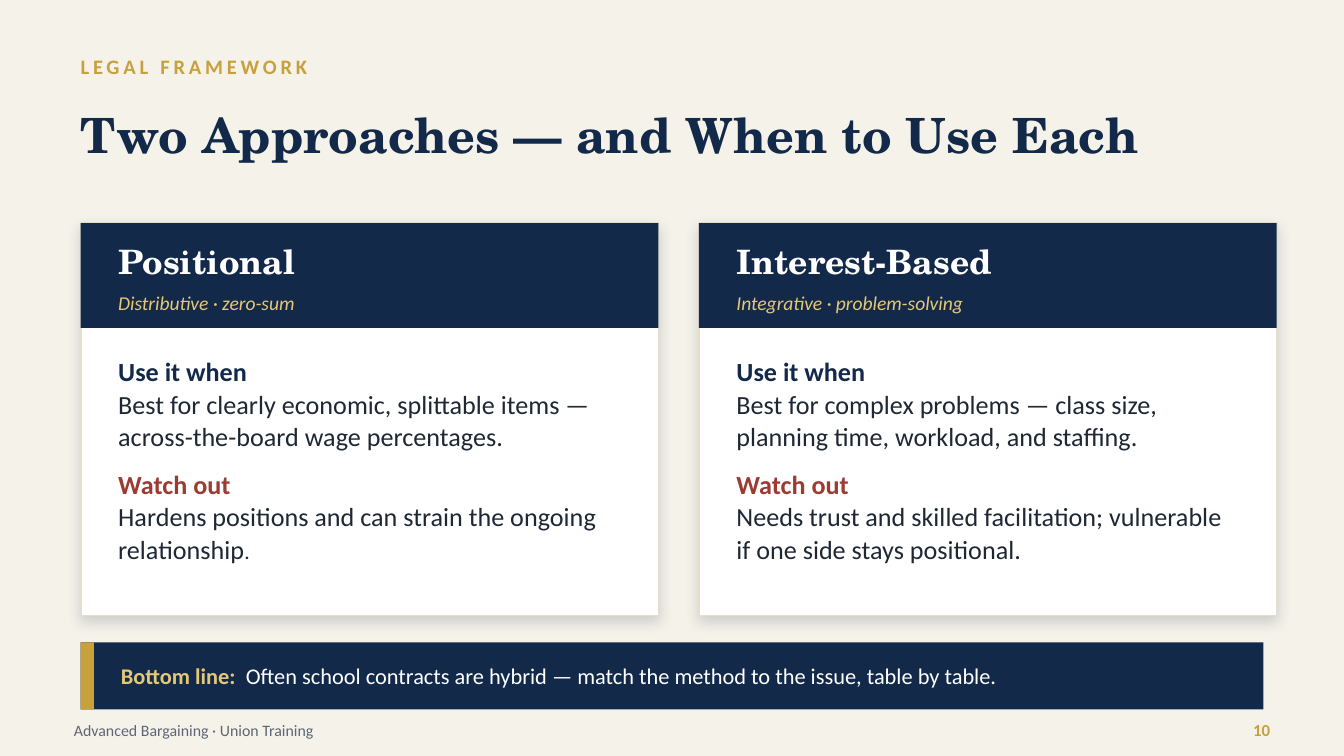
from copy import deepcopy
from pptx import Presentation
from pptx import util as u
from pptx.dml.color import RGBColor
from pptx.enum import shapes, text
from pptx.oxml import parse_xml
from pptx.oxml.ns import nsdecls

HUES = {
    "paper": "F5F2EA", "navy": "12294A", "gold": "C8A03C", "sand": "E4C878",
    "white": "FFFFFF", "edge": "E4DECF", "ink": "1E2733", "red": "9C3B32",
    "gray": "5C6675", "shade": "0C1D36",
}
SANS, SERIF = "Calibri", "TeX Gyre Schola"
WIDE = 10
HIGH = WIDE * 9 / 16
BODY = {"size": 14, "hue": "ink"}
CARDS = [
    ("Positional", "Distributive · zero-sum",
     [("Best for clearly economic, splittable items — "
       "across-the-board wage percentages.", BODY)],
     [("Hardens positions and can strain the ongoing relationship", BODY),
      (".", {"size": 11.5, "hue": "ink"})]),
    ("Interest-Based", "Integrative · problem-solving",
     [("Best for complex problems — class size, planning time, "
       "workload, and staffing.", BODY)],
     [("Needs trust and skilled facilitation; vulnerable "
       "if one side stays positional.", BODY)]),
]


def color(name):
    return RGBColor.from_string(HUES[name])


def place(box):
    return [u.Inches(n) for n in box]


def add_run(para, words, size, hue, name=SANS, gap=0, **style):
    """Add a run; gap is extra letter spacing in points."""
    run = para.add_run()
    run.text = words
    look = {"size": u.Pt(size), "name": name, **style}
    for key, value in look.items():
        setattr(run.font, key, value)
    run.font.color.rgb = color(hue)
    if gap:
        run.font._element.set("spc", str(round(gap * 100)))
    return run


def add_text(slide, box, runs, anchor="MIDDLE", **layout):
    frame = slide.shapes.add_textbox(*place(box)).text_frame
    look = {"word_wrap": True, "margin_left": 0, "margin_right": 0,
            "margin_top": 0, "margin_bottom": 0,
            "vertical_anchor": text.MSO_ANCHOR[anchor]}
    for key, value in look.items():
        setattr(frame, key, value)
    para = frame.paragraphs[0]
    for key, value in layout.items():
        setattr(para, key, value)
    for words, style in runs:
        add_run(para, words, **style)
    return para


def add_rect(slide, box, hue, edge=None):
    rect = slide.shapes.add_shape(shapes.MSO_SHAPE.RECTANGLE, *place(box))
    rect.shadow.inherit = False
    rect.fill.solid()
    rect.fill.fore_color.rgb = color(hue)
    if edge:
        rect.line.color.rgb = color(edge)
        rect.line.width = u.Pt(1)
    else:
        rect.line.fill.background()
    return rect


def add_shade(shape):
    """Give a shape a soft shadow straight below it."""
    shape._element.spPr.find(".//{*}effectLst").append(parse_xml(
        f'<a:outerShdw {nsdecls("a")} blurRad="{u.Pt(7)}" dist="{u.Pt(3)}" '
        f'dir="5400000" algn="ctr" rotWithShape="0">'
        f'<a:srgbClr val="{HUES["shade"]}"><a:alpha val="16000"/></a:srgbClr>'
        f'</a:outerShdw>'))


def add_note(slide, box, head, hue, runs):
    """Add a bold heading with its body on the next line."""
    para = add_text(slide, box, [], "TOP", line_spacing=1.03)
    lead = add_run(para, head, 14, hue, bold=True)
    para.add_line_break()
    para._p[-1].append(deepcopy(lead.font._element))
    for words, style in runs:
        add_run(para, words, **style)


def add_card(slide, left, title, kind, use, risk):
    top, wide = 1.66, 4.3
    add_shade(add_rect(slide, (left, top, wide, 2.92), "white", "edge"))
    add_rect(slide, (left, top, wide, 0.78), "navy")
    inner = left + 0.28
    add_text(slide, (inner, 1.76, 3.8, 0.36), [
        (title, {"size": 18, "hue": "white", "name": SERIF, "bold": True})])
    add_text(slide, (inner, 2.12, 3.8, 0.26), [
        (kind, {"size": 10.5, "hue": "sand", "italic": True})])
    add_note(slide, (inner, 2.64, 3.76, 0.86), "Use it when", "navy", use)
    add_note(slide, (inner, 3.48, 3.76, 0.72), "Watch out", "red", risk)


def add_banner(slide):
    left, top, high = 0.6, 4.78, 0.5
    add_rect(slide, (left, top, 8.8, high), "navy")
    add_rect(slide, (left, top, 0.1, high), "gold")
    add_text(slide, (left + 0.3, top, 8.3, high), [
        ("Bottom line:", {"size": 12, "hue": "sand", "bold": True}),
        (" ", {"size": 12, "hue": "sand", "bold": True, "gap": 2.7}),
        ("Often school contracts are hybrid — match the method to the issue, "
         "table by table.", {"size": 12, "hue": "white"})])


def add_footer(slide):
    top, high = 5.28, 0.3
    add_text(slide, (0.55, top, 6.5, high), [
        ("Advanced Bargaining · Union Training", {"size": 8.5, "hue": "gray"})])
    add_text(slide, (9, top, 0.45, high), [
        ("10", {"size": 9, "hue": "gold", "bold": True})],
        alignment=text.PP_ALIGN.RIGHT)


def main():
    deck = Presentation()
    deck.slide_width, deck.slide_height = place((WIDE, HIGH))
    slide = deck.slides.add_slide(deck.slide_layouts[6])
    slide.background.fill.solid()
    slide.background.fill.fore_color.rgb = color("paper")
    add_text(slide, (0.6, 0.34, 8.8, 0.3), [
        ("LEGAL FRAMEWORK",
         {"size": 11, "hue": "gold", "bold": True, "gap": 2})])
    add_text(slide, (0.6, 0.62, 8.8, 0.75), [
        ("Two Approaches — and When to Use Each",
         {"size": 26, "hue": "navy", "name": SERIF, "bold": True})])
    for i, card in enumerate(CARDS):
        add_card(slide, 0.6 + 4.6 * i, *card)
    add_banner(slide)
    add_footer(slide)
    deck.save("out.pptx")


if __name__ == "__main__":
    main()
